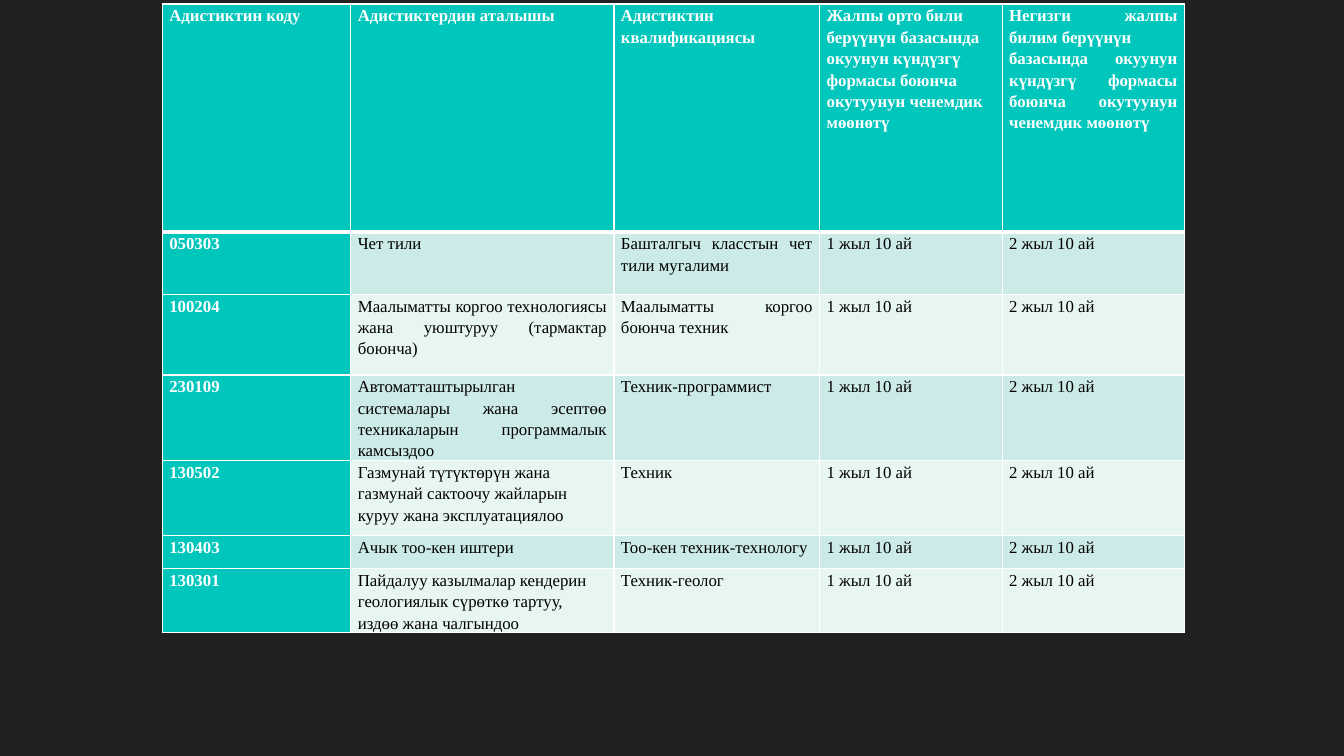
from dataclasses import dataclass

from lxml.etree import SubElement
from pptx import Presentation
from pptx.dml.color import RGBColor
from pptx.enum.text import PP_ALIGN
from pptx.oxml.ns import qn
from pptx.util import Inches, Pt


@dataclass(frozen=True)
class Theme:
    font: str = "Times New Roman"
    size: int = 12
    spacing: float = 1.15
    back: str = "212121"
    main: str = "00C6BB"
    light: str = "FFFFFF"
    dark: str = "000000"
    bands: tuple = ("CCEAE7", "E7F5F3")
    thin: int = 1
    thick: int = 3


THEME = Theme()
LEFT, TOP, PAD = 1.61, 0.04, 0.07
COLS = (1.87, 2.61, 2.04, 1.81, 1.81)
ROWS = (2.26, 0.62, 0.8, 0.74, 0.74, 0.33, 0.4)
NAME_COL, TERM_COL = 1, 3
LONG_NAMES = 4  # names are ragged from this row on

HEADS = (
    "Адистиктин коду",
    "Адистиктердин аталышы",
    "Адистиктин квалификациясы",
    "Жалпы орто били берүүнүн базасында окуунун күндүзгү формасы "
    "боюнча окутуунун ченемдик мөөнөтү",
    "Негизги жалпы билим берүүнүн\nбазасында окуунун күндүзгү формасы "
    "боюнча окутуунун ченемдик мөөнөтү",
)
COURSES = (
    ("050303", "Чет тили", "Башталгыч класстын чет тили мугалими"),
    ("100204", "Маалыматты коргоо технологиясы жана уюштуруу (тармактар боюнча)",
     "Маалыматты коргоо боюнча техник"),
    ("230109", "Автоматташтырылган системалары жана эсептөө техникаларын "
     "программалык камсыздоо", "Техник-программист"),
    ("130502", "Газмунай түтүктөрүн жана газмунай сактоочу жайларын куруу "
     "жана эксплуатациялоо", "Техник"),
    ("130403", "Ачык тоо-кен иштери", "Тоо-кен техник-технологу"),
    ("130301", "Пайдалуу казылмалар кендерин геологиялык сүрөткө тартуу, "
     "издөө жана чалгындоо", "Техник-геолог"),
)
TERMS = ("1 жыл 10 ай", "2 жыл 10 ай")


def color(code):
    return RGBColor.from_string(code)


def set_edges(cell, row):
    """Draw white cell borders, thick between the header and the body."""
    props = cell._tc.get_or_add_tcPr()
    for side in "LRTB":
        heavy = (row, side) in ((0, "B"), (1, "T"))
        width = THEME.thick if heavy else THEME.thin
        line = SubElement(props, qn(f"a:ln{side}"), w=str(Pt(width)))
        fill = SubElement(line, qn("a:solidFill"))
        SubElement(fill, qn("a:srgbClr"), val=THEME.light)


def set_cell(cell, text, row, col):
    strong = row == 0 or col == 0
    ragged = col == TERM_COL or (col == NAME_COL and row >= LONG_NAMES)
    set_edges(cell, row)
    cell.fill.solid()
    cell.fill.fore_color.rgb = color(
        THEME.main if strong else THEME.bands[(row - 1) % 2])
    cell.margin_left = cell.margin_right = Inches(PAD)
    cell.margin_top = cell.margin_bottom = 0
    cell.text = text
    for para in cell.text_frame.paragraphs:
        para.alignment = PP_ALIGN.LEFT if ragged else PP_ALIGN.JUSTIFY
        para.line_spacing = THEME.spacing
        para.font.name = THEME.font
        para.font.size = Pt(THEME.size)
        para.font.bold = strong
        para.font.color.rgb = color(THEME.light if strong else THEME.dark)


def add_grid(slide, data):
    frame = slide.shapes.add_table(
        len(ROWS), len(COLS), Inches(LEFT), Inches(TOP),
        Inches(sum(COLS)), Inches(sum(ROWS)))
    table = frame.table
    table.horz_banding = False
    for col, width in zip(table.columns, COLS):
        col.width = Inches(width)
    for row, height in zip(table.rows, ROWS):
        row.height = Inches(height)
    for row, texts in enumerate(data):
        for col, text in enumerate(texts):
            set_cell(table.cell(row, col), text, row, col)


def main():
    deck = Presentation()
    deck.slide_width, deck.slide_height = Inches(13.33), Inches(7.5)
    slide = deck.slides.add_slide(deck.slide_layouts[6])
    slide.background.fill.solid()
    slide.background.fill.fore_color.rgb = color(THEME.back)
    add_grid(slide, (HEADS, *(course + TERMS for course in COURSES)))
    deck.save("out.pptx")


if __name__ == "__main__":
    main()
